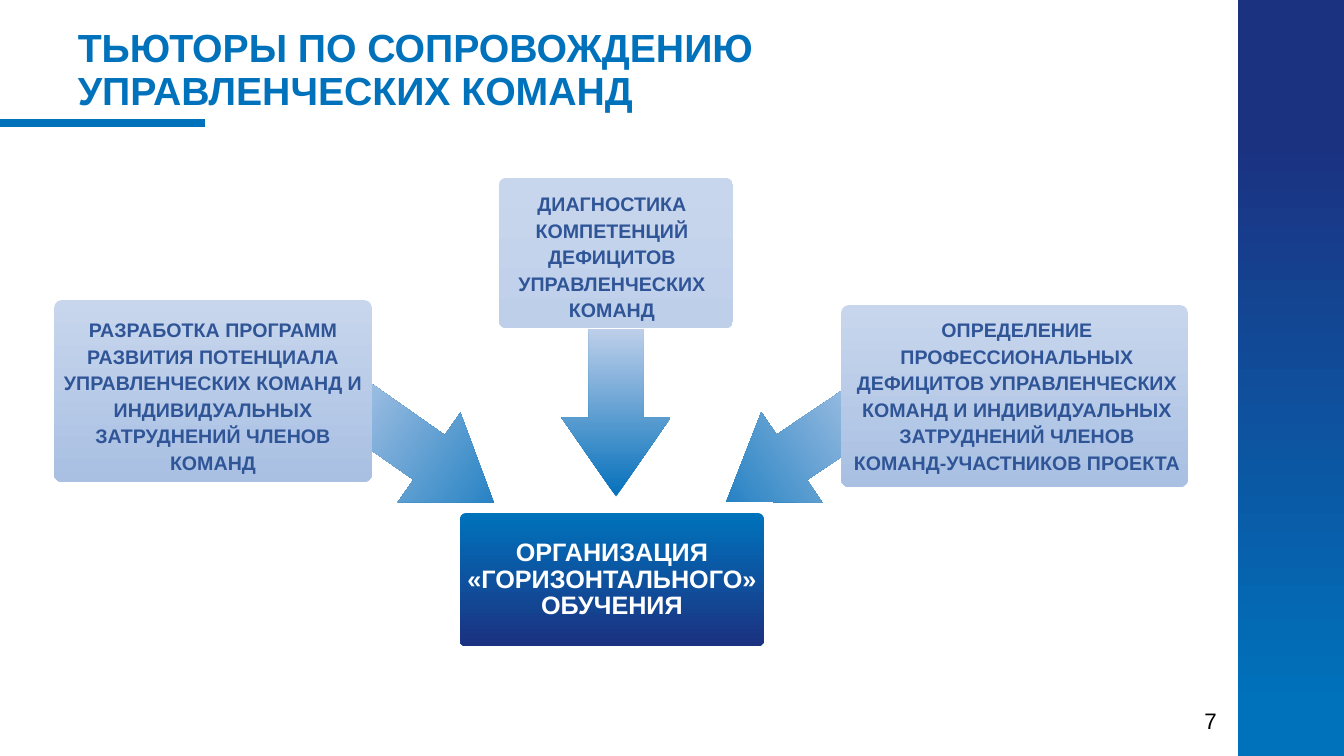
from pptx import Presentation
from pptx.dml.color import RGBColor
from pptx.enum.shapes import MSO_CONNECTOR, MSO_SHAPE
from pptx.enum.text import MSO_ANCHOR, PP_ALIGN
from pptx.oxml.ns import qn
from pptx.util import Pt
from lxml.etree import SubElement

SLIDE_W, SLIDE_H = 1344, 756
EMU_PER_PX = 12192000 / SLIDE_W
COLORS = {
    "blue": "0072BC", "navy": "1B3281", "arrow_tip": "0571BB",
    "pale": "C8D6ED", "light": "BECFEA", "mid": "A9C0E3",
    "task_text": "2F5597", "white": "FFFFFF", "black": "000000",
}
DOWNWARD, LEFTWARD = 270, 180


def px(*lengths):
    return [round(length * EMU_PER_PX) for length in lengths]


def color(name):
    return RGBColor.from_string(COLORS[name])


def add_gradient_shape(slide, kind, box, stops, angle=DOWNWARD, adjust=(), rotation=0):
    """stops is two (position, colour name) pairs."""
    shape = slide.shapes.add_shape(kind, *px(*box))
    shape.shadow.inherit = False
    shape.rotation = rotation
    for index, value in enumerate(adjust):
        shape.adjustments[index] = value
    shape.line.fill.background()
    shape.fill.gradient()
    shape.fill.gradient_angle = angle
    for stop, (position, name) in zip(shape.fill.gradient_stops, stops):
        stop.position = position
        stop.color.rgb = color(name)


def add_text(slide, box, text, *, size, ink, bold=True, align=PP_ALIGN.CENTER,
             anchor=MSO_ANCHOR.TOP, leading=None):
    frame = slide.shapes.add_textbox(*px(*box)).text_frame
    frame.word_wrap = True
    frame.vertical_anchor = anchor
    frame.text = text
    for paragraph in frame.paragraphs:
        paragraph.alignment = align
        if leading:
            paragraph.line_spacing = Pt(leading)
        font = paragraph.font
        font.name, font.size, font.bold = "Arial", Pt(size), bold
        font.color.rgb = color(ink)


def add_rule(slide, start, end, ink, width):
    rule = slide.shapes.add_connector(MSO_CONNECTOR.STRAIGHT, *px(*start, *end))
    rule.line.color.rgb = color(ink)
    rule.line.width = Pt(width)
    SubElement(rule._element.spPr, qn("a:effectLst"))


def add_arrow(slide, left, top, rotation):
    add_gradient_shape(slide, MSO_SHAPE.RIGHT_ARROW, (left, top, 168, 109),
                       [(0, "arrow_tip"), (1, "light")], LEFTWARD, (0.5, 0.724), rotation)


def add_card(slide, box, text_box, text, top_color, bottom_color, size=14, ink="task_text"):
    add_gradient_shape(slide, MSO_SHAPE.ROUNDED_RECTANGLE, box,
                       [(0, top_color), (1, bottom_color)], adjust=[0.045])
    add_text(slide, text_box, text, size=size, ink=ink, leading=19)


def main():
    deck = Presentation()
    deck.slide_width, deck.slide_height = px(SLIDE_W, SLIDE_H)
    slide = deck.slides.add_slide(deck.slide_layouts[6])

    add_text(slide, (1170, 700, 81, 41), "7", size=16, ink="black", bold=False,
             anchor=MSO_ANCHOR.MIDDLE)
    add_gradient_shape(slide, MSO_SHAPE.RECTANGLE, (1238, 0, 106, SLIDE_H),
                       [(0.18, "navy"), (0.94, "blue")])
    add_rule(slide, (0, 123), (205, 123), "blue", 6)
    add_text(slide, (68, 17, 1160, 106),
             "ТЬЮТОРЫ ПО СОПРОВОЖДЕНИЮ\nУПРАВЛЕНЧЕСКИХ КОМАНД",
             size=28, ink="blue", align=PP_ALIGN.LEFT, anchor=MSO_ANCHOR.MIDDLE, leading=31)

    for left, top, rotation in [(712, 400, 146), (532, 358, 90), (341, 400, 35)]:
        add_arrow(slide, left, top, rotation)

    add_card(slide, (841, 305, 347, 182), (841, 310, 352, 171),
             "ОПРЕДЕЛЕНИЕ ПРОФЕССИОНАЛЬНЫХ ДЕФИЦИТОВ УПРАВЛЕНЧЕСКИХ КОМАНД "
             "И ИНДИВИДУАЛЬНЫХ ЗАТРУДНЕНИЙ ЧЛЕНОВ КОМАНД-УЧАСТНИКОВ ПРОЕКТА",
             "pale", "mid")
    add_card(slide, (54, 300, 318, 182), (54, 310, 318, 171),
             "РАЗРАБОТКА ПРОГРАММ РАЗВИТИЯ ПОТЕНЦИАЛА УПРАВЛЕНЧЕСКИХ КОМАНД "
             "И ИНДИВИДУАЛЬНЫХ ЗАТРУДНЕНИЙ ЧЛЕНОВ КОМАНД",
             "pale", "mid")
    add_card(slide, (499, 178, 234, 150), (491, 184, 242, 144),
             "ДИАГНОСТИКА КОМПЕТЕНЦИЙ ДЕФИЦИТОВ УПРАВЛЕНЧЕСКИХ КОМАНД",
             "pale", "light")
    add_card(slide, (460, 513, 304, 133), (455, 535, 314, 91),
             "ОРГАНИЗАЦИЯ «ГОРИЗОНТАЛЬНОГО» ОБУЧЕНИЯ",
             "blue", "navy", size=18, ink="white")

    deck.save("out.pptx")


if __name__ == "__main__":
    main()
